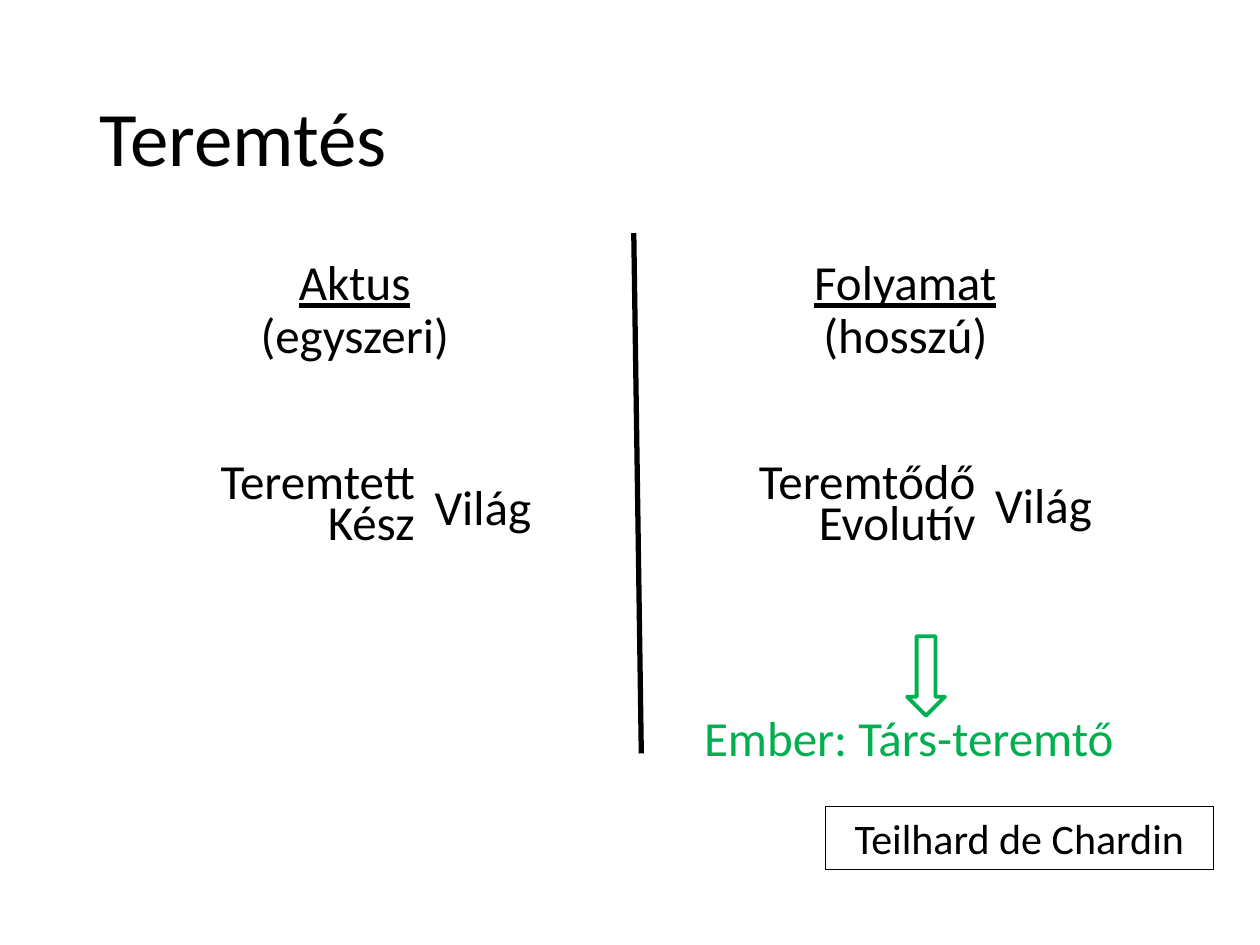
from dataclasses import dataclass

from lxml import etree
from pptx import Presentation
from pptx.dml.color import RGBColor
from pptx.enum.shapes import MSO_CONNECTOR, MSO_SHAPE
from pptx.enum.text import MSO_ANCHOR, PP_ALIGN
from pptx.oxml.ns import qn
from pptx.util import Inches, Pt

LEFT, CENTER, RIGHT = PP_ALIGN.LEFT, PP_ALIGN.CENTER, PP_ALIGN.RIGHT
TOP, MIDDLE = MSO_ANCHOR.TOP, MSO_ANCHOR.MIDDLE
STRAIGHT = MSO_CONNECTOR.STRAIGHT
RECTANGLE, DOWN_ARROW = MSO_SHAPE.RECTANGLE, MSO_SHAPE.DOWN_ARROW


@dataclass(frozen=True)
class Theme:
    font: str = "Calibri"
    ink: RGBColor = RGBColor(0x00, 0x00, 0x00)
    accent: RGBColor = RGBColor(0x00, 0xB0, 0x50)
    title: int = 44
    body: int = 28
    name: int = 24


THEME = Theme()


def write(frame, lines, size=THEME.body, color=THEME.ink, align=LEFT,
          spacing=1.0, anchor=TOP):
    """Fill a text frame with one paragraph per line."""
    frame.word_wrap = True
    frame.vertical_anchor = anchor
    for index, line in enumerate(lines):
        paragraph = frame.paragraphs[0] if index == 0 else frame.add_paragraph()
        paragraph.text = line
        paragraph.alignment = align
        paragraph.line_spacing = spacing
        paragraph.font.name = THEME.font
        paragraph.font.size = Pt(size)
        paragraph.font.color.rgb = color


def add_text(shapes, box, lines, **style):
    frame = shapes.add_textbox(*map(Inches, box)).text_frame
    write(frame, lines, **style)
    return frame


def add_outline(shapes, kind, box, color, width):
    shape = shapes.add_shape(kind, *map(Inches, box))
    shape.shadow.inherit = False
    shape.fill.background()
    shape.line.color.rgb = color
    shape.line.width = Pt(width)
    return shape


def add_column(slide, box, heading, note):
    """Underlined heading with a note below it."""
    frame = add_text(slide.shapes, box, [heading, note], align=CENTER, spacing=0.9)
    first = frame.paragraphs[0]
    first.space_before = Pt(10)
    first.font.underline = True


def add_world(slide, box, qualities, noun_top):
    """Two stacked qualities beside the noun they share."""
    left, top, width, height = box
    group = slide.shapes.add_group_shape().shapes
    add_text(group, box, qualities, align=RIGHT, spacing=0.7)
    add_text(group, (left + width - 0.04, noun_top, 1.12, 0.57), ["Világ"])


def add_divider(slide, start, end):
    line = slide.shapes.add_connector(STRAIGHT, *map(Inches, start + end))
    line.line.color.rgb = THEME.ink
    line.line.width = Pt(3)
    etree.SubElement(line._element.spPr, qn("a:effectLst"))


def add_conclusion(slide, box):
    """Green arrow leading down to the conclusion."""
    left, top, width, height = box
    group = slide.shapes.add_group_shape().shapes
    add_outline(group, DOWN_ARROW, (left + 1.71, top, 0.3, 0.63), THEME.accent, 2.25)
    add_text(group, (left, top + 0.52, width, height - 0.52),
             ["Ember: Társ-teremtő"], color=THEME.accent)


def add_author(slide, box):
    frame = add_outline(slide.shapes, RECTANGLE, box, THEME.ink, 0.75).text_frame
    write(frame, ["Teilhard de Chardin"], size=THEME.name, align=CENTER)


def main():
    deck = Presentation()
    deck.slide_width, deck.slide_height = Inches(10), Inches(7.5)
    slide = deck.slides.add_slide(deck.slide_layouts[6])

    # Title
    add_text(slide.shapes, (0.69, 0.4, 8.62, 1.45), ["Teremtés"],
             size=THEME.title, spacing=0.9, anchor=MIDDLE)

    # Two views of creation
    add_column(slide, (0.69, 2, 4.25, 4.76), "Aktus", "(egyszeri)")
    add_column(slide, (5.06, 2, 4.25, 4.76), "Folyamat", "(hosszú)")
    add_world(slide, (1.25, 3.65, 2.14, 0.78), ["Teremtett", "Kész"], 3.73)
    add_world(slide, (5.7, 3.65, 2.14, 0.78), ["Teremtődő", "Evolutív"], 3.72)
    add_divider(slide, (5.03, 1.85), (5.09, 5.98))

    # Conclusion and its author
    add_conclusion(slide, (5.49, 5.05, 3.77, 1.09))
    add_author(slide, (6.55, 6.4, 3.08, 0.5))

    deck.save("out.pptx")


if __name__ == "__main__":
    main()
